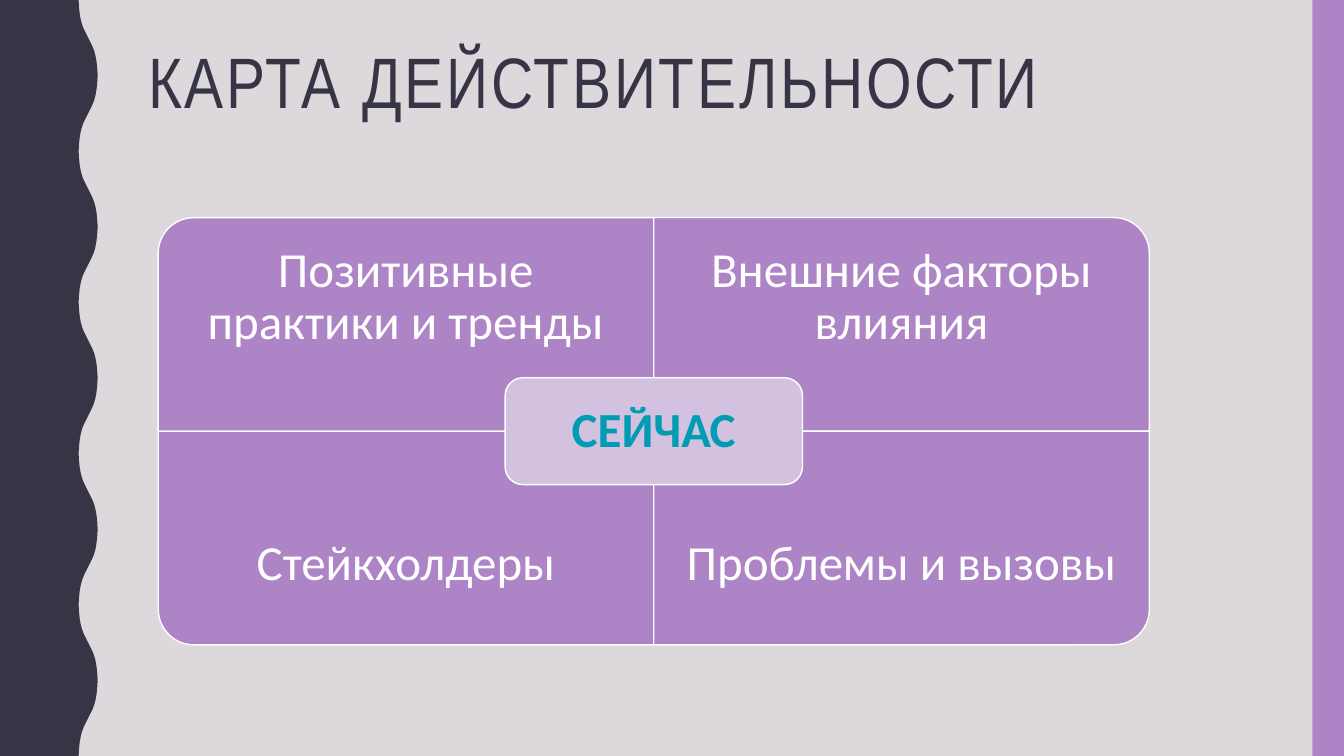
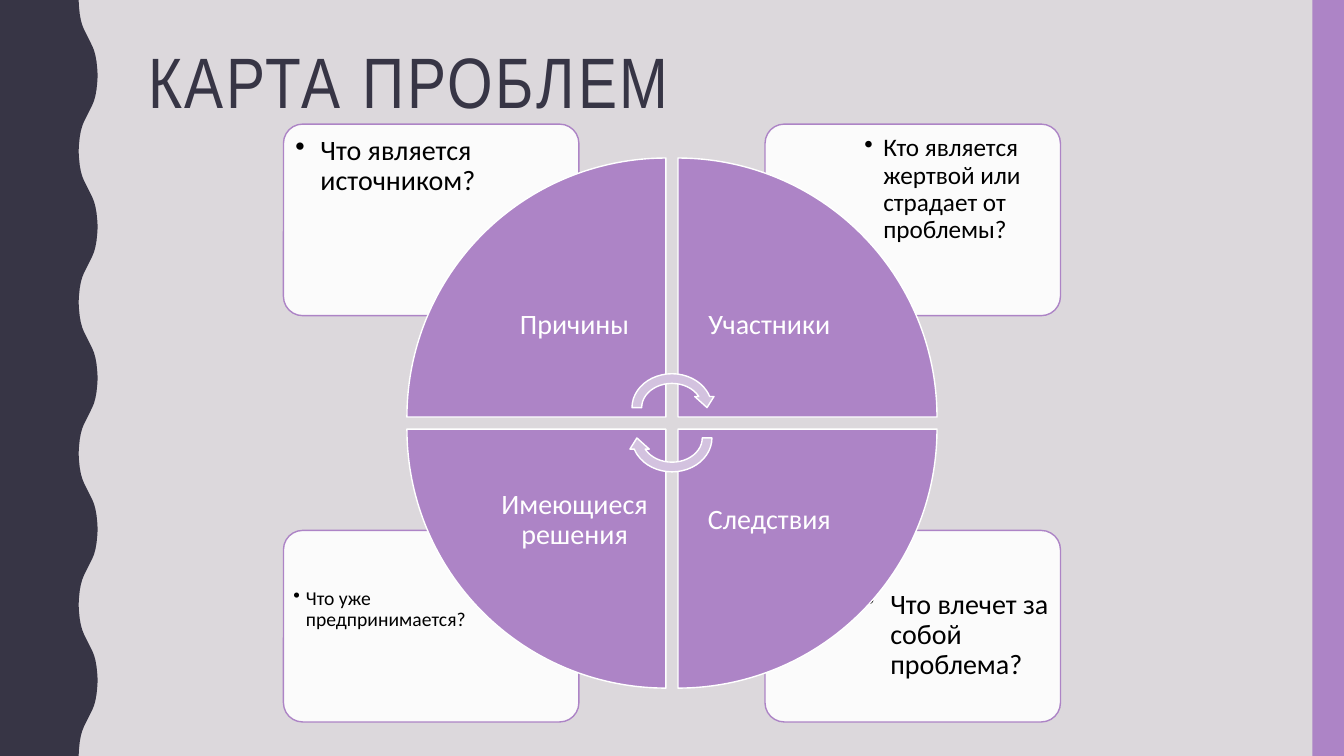
from dataclasses import dataclass

from lxml import etree
from pptx import Presentation
from pptx import util as u
from pptx.dml.color import RGBColor
from pptx.enum import shapes, text
from pptx.oxml import ns


@dataclass(frozen=True)
class Theme:
    backdrop: str = "DCD8DC"
    dark: str = "373545"
    purple: str = "AD84C6"
    lilac: str = "D3C2DF"
    teal: str = "009CB3"
    white: str = "FFFFFF"
    black: str = "000000"
    heading_font: str = "Arial Narrow"
    body_font: str = "Calibri"
    heading_size: int = 51
    quadrant_size: int = 35
    wedge_size: int = 20


theme = Theme()
kinds = shapes.MSO_SHAPE


def write(frame, content, size, color, font=theme.body_font, bold=False,
          align=text.PP_ALIGN.CENTER, anchor=text.MSO_ANCHOR.MIDDLE,
          inset=None, hanging=0, tracking=0):
    frame.word_wrap = True
    frame.auto_size = text.MSO_AUTO_SIZE.NONE
    frame.vertical_anchor = anchor
    if inset is not None:
        frame.margin_left = frame.margin_right = u.Pt(inset)
        frame.margin_top = frame.margin_bottom = u.Pt(inset)
    paragraph = frame.paragraphs[0]
    paragraph.alignment = align
    paragraph.line_spacing = 0.9
    run = paragraph.add_run()
    run.text = content
    run.font.name = font
    run.font.size = u.Pt(size)
    run.font.bold = bold
    run.font.color.rgb = RGBColor.from_string(color)
    if tracking:
        run.font._element.set("spc", str(tracking * 100))
    if hanging:
        properties = paragraph._p.get_or_add_pPr()
        properties.set("marL", str(u.Pt(hanging)))
        properties.set("indent", str(-u.Pt(hanging)))
        etree.SubElement(properties, ns.qn("a:buChar")).set("char", "•")


def draw(slide, kind, left, top, width, height, fill, line=None, turn=0):
    if turn % 180:
        left, top = left + (width - height) / 2, top + (height - width) / 2
        width, height = height, width
    shape = slide.shapes.add_shape(kind, u.Pt(left), u.Pt(top), u.Pt(width), u.Pt(height))
    shape.rotation = turn
    shape.shadow.inherit = False
    shape.fill.solid()
    shape.fill.fore_color.rgb = RGBColor.from_string(fill)
    if line:
        shape.line.color.rgb = RGBColor.from_string(line)
        shape.line.width = u.Pt(1)
    else:
        shape.line.fill.background()
    return shape


prs = Presentation()
prs.slide_width, prs.slide_height = u.Pt(960), u.Pt(540)
master = prs.slide_master
master.background.fill.solid()
master.background.fill.fore_color.rgb = RGBColor.from_string(theme.backdrop)

layout = prs.slide_layouts[5]
heading = layout.placeholders[0]
heading.left, heading.top = u.Pt(98.6), u.Pt(30.2)
heading.width, heading.height = u.Pt(801.4), u.Pt(117.4)

reality, problems = [prs.slides.add_slide(layout) for _ in range(2)]
for slide, name in ((reality, "КАРТА ДЕЙСТВИТЕЛЬНОСТИ"), (problems, "КАРТА ПРОБЛЕМ")):
    write(slide.shapes.title.text_frame, name, theme.heading_size, theme.dark,
          font=theme.heading_font, align=text.PP_ALIGN.LEFT,
          anchor=text.MSO_ANCHOR.TOP, tracking=2)

quarter = [(56.2, 0), (56.5, 5), (57, 10), (57.8, 14.4), (58.8, 18), (60, 21), (61.5, 24)]
rise = quarter + [(63, 27)] + [(126 - x, 54 - y) for x, y in reversed(quarter)]
wave = rise + [(x, 108 - y) for x, y in reversed(rise[:-1])]
edge = [(x, y + 108 * crest) for crest in range(5) for x, y in wave]
outline = reality.shapes.build_freeform(0, 0)
outline.add_line_segments([(u.Pt(x), u.Pt(y)) for x, y in edge + [(0, 540)]])
wavy_band = outline.convert_to_shape()
wavy_band.shadow.inherit = False
wavy_band.fill.solid()
wavy_band.fill.fore_color.rgb = RGBColor.from_string(theme.dark)
wavy_band.line.fill.background()
right_band = draw(reality, kinds.RECTANGLE, 937.5, 0, 22.5, 540, theme.purple)
for number, band in enumerate((wavy_band, right_band)):
    band._element.nvSpPr.cNvPr.set("id", str(100 + number))
    master.shapes.element.insert(2 + number, band._element)

middle_x, middle_y = 467, 308
cell_width, cell_height = 354, 152.6
label_height = cell_height * 0.75
quadrants = [
    ("Позитивные практики и тренды", 0, 0, 270),
    ("Внешние факторы влияния", 1, 0, 0),
    ("Стейкхолдеры", 0, 1, 180),
    ("Проблемы и вызовы", 1, 1, 90),
]
for label, column, row, turn in quadrants:
    left = middle_x + (column - 1) * cell_width
    top = middle_y + (row - 1) * cell_height
    draw(reality, kinds.ROUND_1_RECTANGLE, left, top, cell_width, cell_height,
         theme.purple, theme.white, turn)
    caption = reality.shapes.add_textbox(
        u.Pt(left), u.Pt(top + row * (cell_height - label_height)),
        u.Pt(cell_width), u.Pt(label_height))
    write(caption.text_frame, label, theme.quadrant_size, theme.white, inset=19.6)

now_width, now_height = cell_width * 0.6, cell_height / 2
now = draw(reality, kinds.ROUNDED_RECTANGLE, middle_x - now_width / 2,
           middle_y - now_height / 2, now_width, now_height, theme.lilac, theme.white)
write(now.text_frame, "СЕЙЧАС", theme.quadrant_size, theme.teal, bold=True, inset=10.8)

hub_x, hub_y = 480, 302.2
card_width, card_height = 211, 136.8
question_width, question_height = 142, 96.5
wedge, wedge_gap, wedge_label = 185, 8.6, 130.5
questions = [
    ("Что влечет за собой проблема?", 1, 1, 20, 18, 5.4),
    ("Что уже предпринимается?", 0, 1, 14, 9, 4),
    ("Кто является жертвой или страдает от проблемы?", 1, 0, 18, 13.5, 4.9),
    ("Что является источником?", 0, 0, 20, 18, 5.4),
]
for question, column, row, size, hanging, inset in questions:
    left = hub_x + (66.5 if column else -66.5 - card_width)
    top = hub_y + (76.7 if row else -76.7 - card_height)
    card = draw(problems, kinds.ROUNDED_RECTANGLE, left, top, card_width, card_height,
                theme.white, theme.purple)
    card.adjustments[0] = 0.1
    tint = card._element.spPr.find(ns.qn("a:solidFill"))[0]
    etree.SubElement(tint, ns.qn("a:alpha")).set("val", "90000")
    note = problems.shapes.add_textbox(
        u.Pt(left + (card_width - question_width - 3 if column else 3)),
        u.Pt(top + (card_height - question_height - 3 if row else 3)),
        u.Pt(question_width), u.Pt(question_height))
    write(note.text_frame, question, size, theme.black, align=text.PP_ALIGN.LEFT,
          anchor=text.MSO_ANCHOR.TOP, inset=inset, hanging=hanging)

sectors = [
    ("Причины", 0, 0),
    ("Участники", 1, 0),
    ("Следствия", 1, 1),
    ("Имеющиеся решения", 0, 1),
]
for order, (label, column, row) in enumerate(sectors):
    left = hub_x + (wedge_gap / 2 if column else -wedge_gap / 2 - wedge)
    top = hub_y + (wedge_gap / 2 if row else -wedge_gap / 2 - wedge)
    draw(problems, kinds.PIE_WEDGE, left, top, wedge, wedge,
         theme.purple, theme.white, order * 90)
    caption = problems.shapes.add_textbox(
        u.Pt(left + (1 - column) * (wedge - wedge_label)),
        u.Pt(top + (1 - row) * (wedge - wedge_label)),
        u.Pt(wedge_label), u.Pt(wedge_label))
    write(caption.text_frame, label, theme.wedge_size, theme.white, inset=11.2)

for top, turn in ((263.5, 0), (285.1, 180)):
    draw(problems, kinds.CIRCULAR_ARROW, hub_x - 32, top, 64, 55.4,
         theme.lilac, theme.white, turn)

prs.save("out.pptx")
